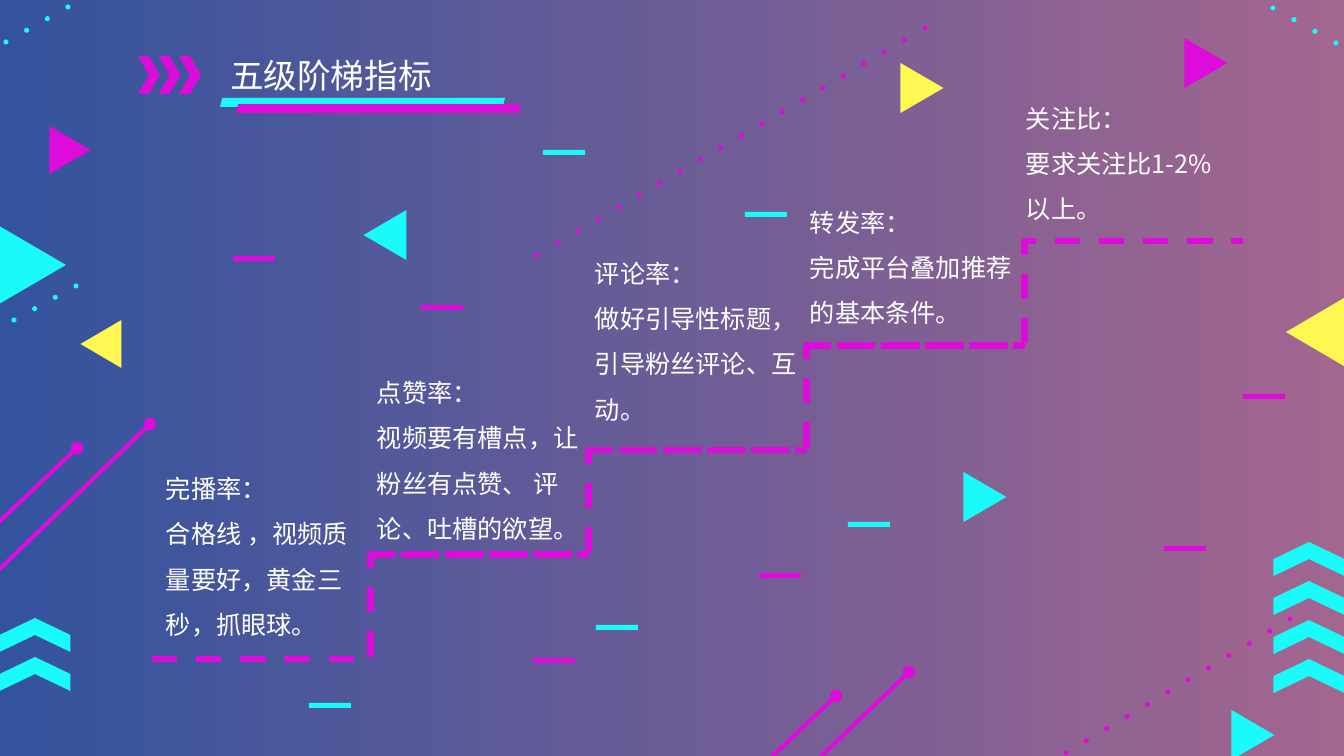
from lxml import etree
from pptx import Presentation
from pptx.dml.color import RGBColor
from pptx.enum.dml import MSO_LINE
from pptx.enum.shapes import MSO_CONNECTOR, MSO_SHAPE
from pptx.enum.text import MSO_ANCHOR, MSO_AUTO_SIZE, PP_ALIGN
from pptx.oxml.ns import qn
from pptx.util import Emu, Pt

STRAIGHT, ELBOW = MSO_CONNECTOR.STRAIGHT, MSO_CONNECTOR.ELBOW
TRIANGLE, CHEVRON = MSO_SHAPE.ISOSCELES_TRIANGLE, MSO_SHAPE.CHEVRON
OVAL, RECT, SLANT = MSO_SHAPE.OVAL, MSO_SHAPE.RECTANGLE, MSO_SHAPE.PARALLELOGRAM
FONT = "Noto Sans CJK SC"
COLORS = {
    "blue": "33539E", "rose": "A3668F", "white": "FFFFFF",
    "cyan": "1AFAF9", "magenta": "DC0DDA", "yellow": "FFF852",
}

TITLE = "五级阶梯指标"
# left, top, width, height, heading, body
STEPS = [
    (156, 453, 203, 189, "完播率：", "合格线 ，视频质量要好，黄金三秒，抓眼球。"),
    (367, 357, 223, 189, "点赞率：", "视频要有槽点，让粉丝有点赞、 评论、吐槽的欲望。"),
    (585, 238, 223, 189, "评论率：", "做好引导性标题， 引导粉丝评论、互动。"),
    (800, 187, 223, 142, "转发率：", "完成平台叠加推荐的基本条件。"),
    (1016, 83, 223, 142, "关注比：", "要求关注比1-2%以上。"),
]
# centre x, centre y, base, height, rotation, colour
TRIANGLES = [
    (33, 265, 77, 66, 90, "cyan"), (1315, 332, 68, 58, 270, "yellow"),
    (1253, 735, 50, 43, 90, "cyan"), (70, 150, 48, 41, 90, "magenta"),
    (1206, 63, 50, 43, 90, "magenta"), (101, 344, 48, 41, 270, "yellow"),
    (922, 88, 50, 43, 90, "yellow"), (985, 497, 50, 43, 90, "cyan"),
    (385, 235, 50, 43, 270, "cyan"),
]
# first centre, last centre, number of dots, colour
DOT_ROWS = [
    ((14, 320), (76, 286), 4, "cyan"), ((6, 42), (68, 7), 4, "cyan"),
    ((1273, 8), (1336, 43), 4, "cyan"), ((1066, 753), (1290, 619), 12, "magenta"),
    ((537, 255), (925, 28), 20, "magenta"),
]
DASHES = {  # left, top
    "magenta": [(1243, 394), (1164, 546), (759, 573), (533, 658), (421, 305), (233, 256)],
    "cyan": [(543, 150), (745, 212), (848, 522), (596, 625), (309, 703)],
}
# centre x, first centre y, count
CHEVRON_STACKS = [(35, 635, 2), (1309, 559, 4)]
RODS = [(-16, 536, 77, 448), (-18, 586, 150, 424),
        (743, 784, 836, 696), (741, 833, 909, 672)]


def px(n):
    return Emu(round(n * 914400 / 100.8))


def rgb(name):
    return RGBColor.from_string(COLORS[name])


def add_centred(kind, cx, cy, w, h, color, rotation=0):
    sp = s.shapes.add_shape(kind, px(cx - w / 2), px(cy - h / 2), px(w), px(h))
    sp.shadow.inherit = False
    sp.fill.solid()
    sp.fill.fore_color.rgb = rgb(color)
    sp.line.fill.background()
    sp.rotation = rotation


def add_box(kind, x, y, w, h, color):
    add_centred(kind, x + w / 2, y + h / 2, w, h, color)


def add_line(kind, x1, y1, x2, y2, width):
    line = s.shapes.add_connector(kind, px(x1), px(y1), px(x2), px(y2))
    line.line.color.rgb = rgb("magenta")
    line.line.width = Pt(width)
    etree.SubElement(line._element.spPr, qn("a:effectLst"))
    return line


def set_font(p, size):
    p.font.size = Pt(size)
    p.font.color.rgb = rgb("white")
    p.font.name = FONT
    etree.SubElement(p.font._rPr, qn("a:ea")).set("typeface", FONT)


prs = Presentation()
prs.slide_width, prs.slide_height = px(1344), px(756)
s = prs.slides.add_slide(prs.slide_layouts[5])
bg = s.background.fill
bg.gradient()
bg.gradient_angle = 0
for stop, color in zip(bg.gradient_stops, ("blue", "rose")):
    stop.color.rgb = rgb(color)

title = s.shapes.title
title.left, title.top, title.width, title.height = map(px, (220, 50, 285, 50))
tf = title.text_frame
tf.text = TITLE
tf.auto_size = MSO_AUTO_SIZE.NONE
tf.vertical_anchor = MSO_ANCHOR.TOP
p = tf.paragraphs[0]
p.alignment = PP_ALIGN.JUSTIFY
set_font(p, 24)
for i in range(3):
    add_box(CHEVRON, 138 + 20.5 * i, 56, 22, 38, "magenta")
add_box(SLANT, 220, 98, 285, 9, "cyan")
add_box(SLANT, 236, 104, 285, 9, "magenta")

for cx, cy, base, height, rotation, color in TRIANGLES:
    add_centred(TRIANGLE, cx, cy, base, height, color, rotation)
for (x1, y1), (x2, y2), count, color in DOT_ROWS:
    for i in range(count):
        t = i / (count - 1)
        add_centred(OVAL, x1 + (x2 - x1) * t, y1 + (y2 - y1) * t, 5, 5, color)
for color, places in DASHES.items():
    for x, y in places:
        add_box(RECT, x, y, 42, 5, color)
for cx, cy, count in CHEVRON_STACKS:
    for i in range(count):
        add_centred(CHEVRON, cx, cy + 39 * i, 34, 71, "cyan", 270)
for ends in RODS:
    ln = add_line(STRAIGHT, *ends, 3).line._ln
    for end in ("a:headEnd", "a:tailEnd"):
        etree.SubElement(ln, qn(end)).set("type", "oval")

for i in range(len(STEPS) - 1):
    x, y = 152 + 218 * i, 659 - 104.5 * i
    stair = add_line(ELBOW, x, y, x + 437, y - 104.5, 4.5)
    stair.line.dash_style = MSO_LINE.DASH

for x, y, w, h, heading, body in STEPS:
    tf = s.shapes.add_textbox(px(x), px(y), px(w), px(h)).text_frame
    tf.word_wrap = True
    tf.text = f"{heading}\n{body}"
    for p in tf.paragraphs:
        p.line_spacing = 1.5
        set_font(p, 18)

prs.save("out.pptx")
